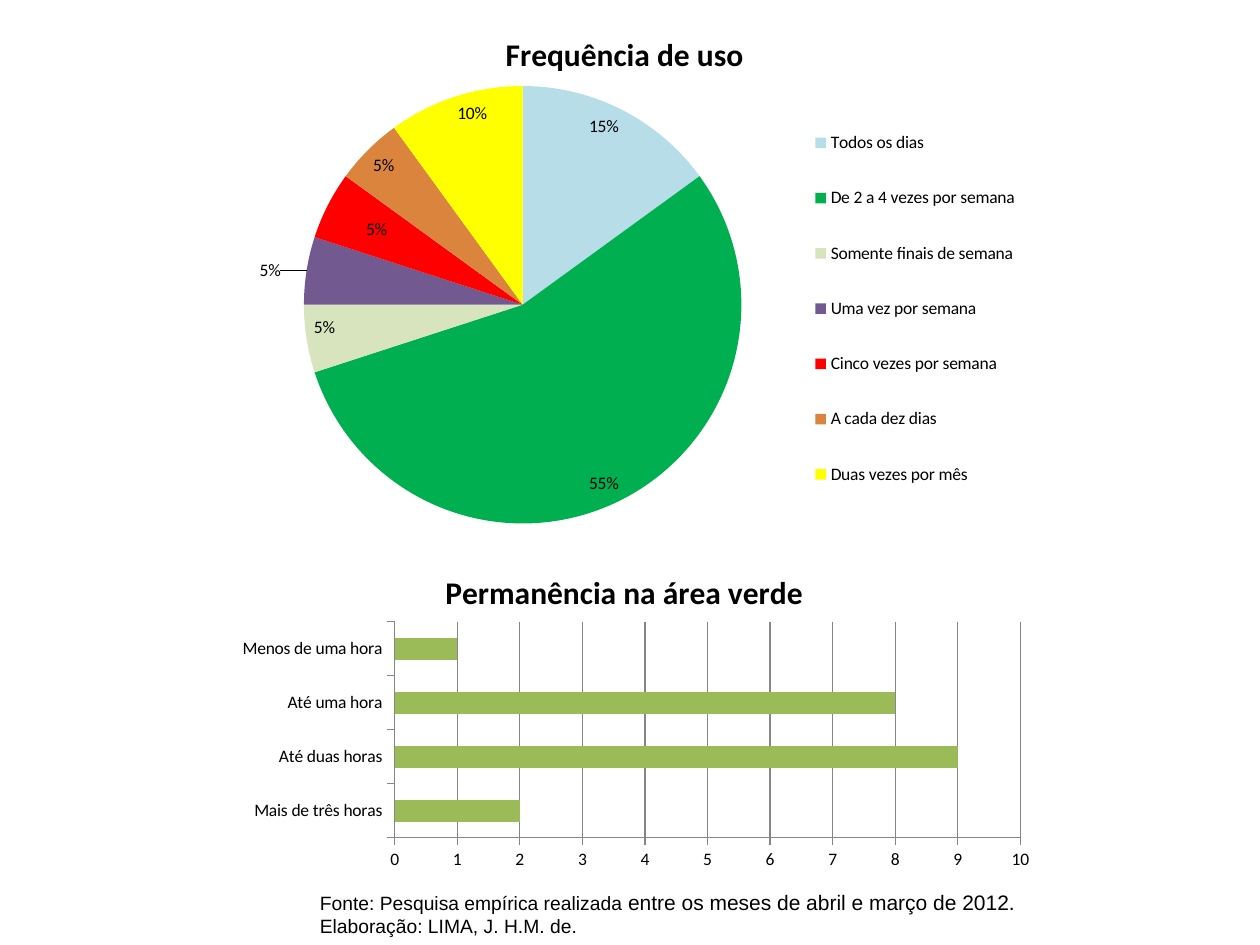
from dataclasses import dataclass

from lxml import etree
from pptx import Presentation, util as u
from pptx.chart.chart import Chart
from pptx.chart.data import CategoryChartData
from pptx.dml.color import RGBColor
from pptx.enum import chart as ch, text as t
from pptx.oxml.ns import qn

WIDTH, HEIGHT = u.Inches(10), u.Inches(7.5)


@dataclass(frozen=True)
class Theme:
    ink: str = "000000"
    axis: str = "868686"
    bar: str = "9BBB59"
    chart_font: str = "Calibri"
    note_font: str = "Arial"
    title_size: int = 18
    label_size: int = 10
    note_size: int = 11
    note_large: int = 12


@dataclass(frozen=True)
class Box:
    """Shares of the enclosing slide or chart."""
    x: float
    y: float
    w: float = 0
    h: float = 0

    def on_slide(self) -> tuple[int, int, int, int]:
        return (int(self.x * WIDTH), int(self.y * HEIGHT),
                int(self.w * WIDTH), int(self.h * HEIGHT))


@dataclass(frozen=True)
class Panel:
    kind: int
    title: str
    title_at: Box
    area: Box
    plot: Box
    values: dict[str, int]


@dataclass(frozen=True)
class LabelShift:
    point: int
    offset: Box


THEME = Theme()

FREQUENCY = Panel(
    ch.XL_CHART_TYPE.PIE, "Frequência de uso", Box(0.367, 0.05),
    Box(0.133, 0, 0.719, 0.573), Box(0.15, 0.159, 0.484, 0.808),
    {"Todos os dias": 15, "De 2 a 4 vezes por semana": 55,
     "Somente finais de semana": 5, "Uma vez por semana": 5,
     "Cinco vezes por semana": 5, "A cada dez dias": 5,
     "Duas vezes por mês": 10})
SLICE_COLORS = ("B7DEE8", "00B050", "D7E4BD", "725990",
                "FF0000", "DB843D", "FFFF00")
LEGEND = Box(0.69, 0.18, 0.27, 0.78)
LABEL_SHIFTS = (LabelShift(3, Box(-0.06, -0.02)),
                LabelShift(4, Box(0.035, 0.02)))

STAY = Panel(
    ch.XL_CHART_TYPE.BAR_CLUSTERED, "Permanência na área verde", Box(0.26, 0.04),
    Box(0.18, 0.584, 0.65, 0.344), Box(0.205, 0.215, 0.764, 0.665),
    {"Mais de três horas": 2, "Até duas horas": 9,
     "Até uma hora": 8, "Menos de uma hora": 1})

SOURCE_AREA = Box(0.195, 0.933, 0.656, 0.067)
SOURCE_LINES = (
    (("Fonte: Pesquisa empírica realizada ", THEME.note_size),
     ("entre os meses de abril e março de 2012.", THEME.note_large)),
    (("Elaboração: LIMA, J. H.M. de.", THEME.note_size),),
)


def color(value: str) -> RGBColor:
    return RGBColor.from_string(value)


def style_font(font, name: str, size: int, bold: bool = False) -> None:
    font.name, font.size, font.bold = name, u.Pt(size), bold
    font.color.rgb = color(THEME.ink)


def place(parent, after: str, box: Box, inner: bool = False) -> None:
    """Give a chart part a manual layout, next to the named child."""
    for old in parent.findall(qn("c:layout")):
        parent.remove(old)
    layout = etree.Element(qn("c:layout"))
    manual = etree.SubElement(layout, qn("c:manualLayout"))
    settings = {"layoutTarget": "inner"} if inner else {}
    if after != "c:idx":
        settings |= {"xMode": "edge", "yMode": "edge"}
    settings |= {"x": box.x, "y": box.y}
    if box.w:
        settings |= {"w": box.w, "h": box.h}
    for tag, value in settings.items():
        etree.SubElement(manual, qn(f"c:{tag}")).set("val", str(value))
    anchor = parent.find(qn(after)) if after else None
    if anchor is None:
        parent.insert(0, layout)
    else:
        anchor.addnext(layout)


def add_panel(slide, panel: Panel) -> Chart:
    data = CategoryChartData()
    data.categories = list(panel.values)
    data.add_series("Series 1", list(panel.values.values()))
    chart = slide.shapes.add_chart(panel.kind, *panel.area.on_slide(), data).chart
    style_font(chart.font, THEME.chart_font, THEME.label_size)
    chart.has_legend = False
    chart.has_title = True
    heading = chart.chart_title.text_frame
    heading.text = panel.title
    style_font(heading.paragraphs[0].font, THEME.chart_font, THEME.title_size, True)
    chart.chart_title.include_in_layout = False
    title = chart.chart_title._element
    place(title, "c:tx", panel.title_at)
    place(title.getparent().find(qn("c:plotArea")), "", panel.plot, inner=True)
    return chart


def style_frequency(chart: Chart) -> None:
    series = chart.plots[0].series[0]
    for index, fill in enumerate(SLICE_COLORS):
        point = series.points[index].format
        point.fill.solid()
        point.fill.fore_color.rgb = color(fill)

    # Percent labels, two of them moved away from the slice edge
    labels = series.data_labels
    labels.show_value, labels.show_percentage = False, True
    labels.number_format, labels.number_format_is_linked = "0%", False
    labels.position = ch.XL_LABEL_POSITION.INSIDE_END
    for shift in LABEL_SHIFTS:
        series.points[shift.point].data_label.position = ch.XL_LABEL_POSITION.INSIDE_END
    for label, shift in zip(labels._element.findall(qn("c:dLbl")), LABEL_SHIFTS):
        label.find(qn("c:showVal")).set("val", "0")
        label.find(qn("c:showPercent")).set("val", "1")
        place(label, "c:idx", shift.offset)

    chart.has_legend = True
    chart.legend.position = ch.XL_LEGEND_POSITION.RIGHT
    chart.legend.include_in_layout = False
    place(chart.legend._element, "c:legendPos", LEGEND)


def style_stay(chart: Chart) -> None:
    plot = chart.plots[0]
    plot.gap_width, plot.vary_by_categories = 150, False
    bars = plot.series[0].format.fill
    bars.solid()
    bars.fore_color.rgb = color(THEME.bar)
    hours, people = chart.category_axis, chart.value_axis
    people.minimum_scale, people.maximum_scale, people.major_unit = 0, 10, 1
    people.has_major_gridlines, hours.has_major_gridlines = True, False
    for axis in (hours, people):
        axis.major_tick_mark = ch.XL_TICK_MARK.OUTSIDE
        axis.minor_tick_mark = ch.XL_TICK_MARK.NONE
    for part in (hours, people, people.major_gridlines):
        part.format.line.color.rgb = color(THEME.axis)
        part.format.line.width = u.Pt(0.75)


def add_source(slide) -> None:
    frame = slide.shapes.add_textbox(*SOURCE_AREA.on_slide()).text_frame
    frame.word_wrap = True
    frame.vertical_anchor = t.MSO_ANCHOR.MIDDLE
    frame.auto_size = t.MSO_AUTO_SIZE.SHAPE_TO_FIT_TEXT
    for index, pieces in enumerate(SOURCE_LINES):
        line = frame.add_paragraph() if index else frame.paragraphs[0]
        line._p.get_or_add_pPr().set("indent", str(u.Inches(0.49)))
        style_font(line.font, THEME.note_font, THEME.note_size)
        for wording, size in pieces:
            run = line.add_run()
            run.text = wording
            run.font.size = u.Pt(size)


def main() -> None:
    deck = Presentation()
    deck.slide_width, deck.slide_height = WIDTH, HEIGHT
    slide = deck.slides.add_slide(deck.slide_layouts[6])
    style_frequency(add_panel(slide, FREQUENCY))
    style_stay(add_panel(slide, STAY))
    add_source(slide)
    deck.save("out.pptx")


if __name__ == "__main__":
    main()
